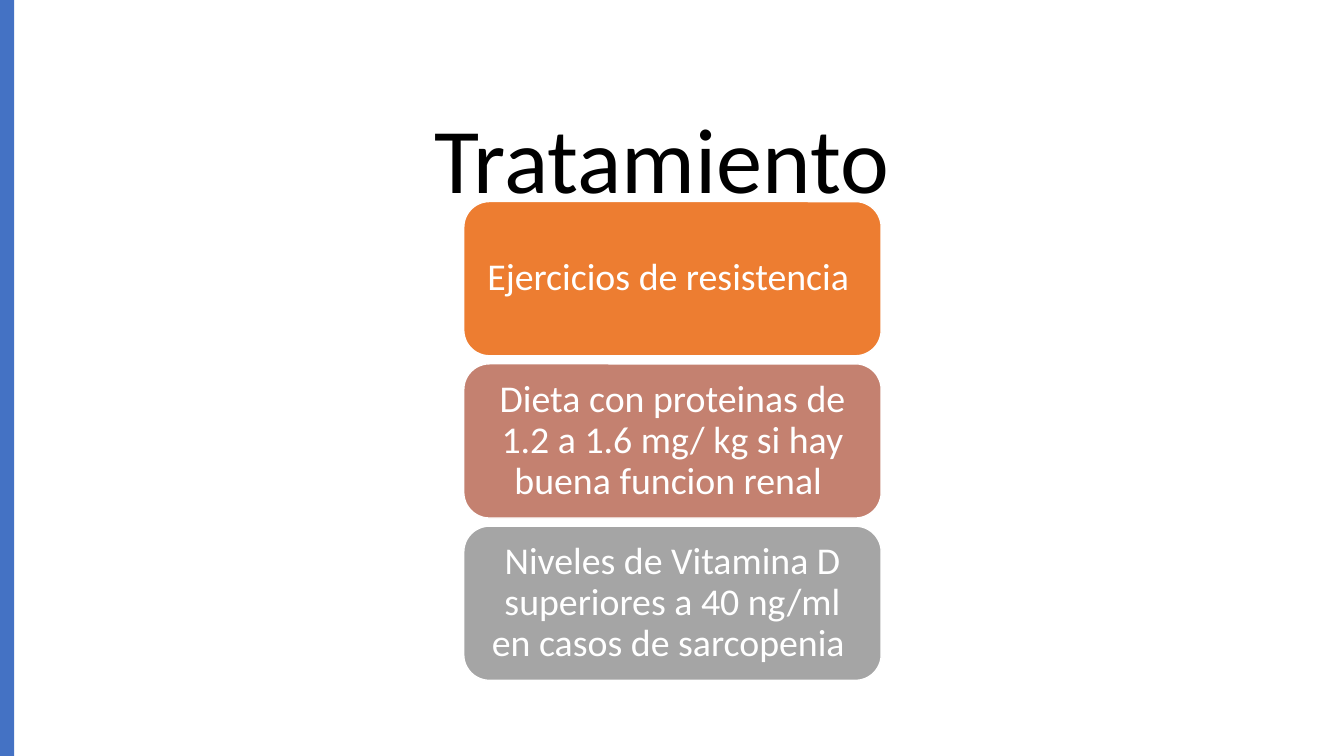
from pptx import Presentation
from pptx.dml.color import RGBColor
from pptx.enum.shapes import MSO_SHAPE
from pptx.enum.text import MSO_ANCHOR, PP_ALIGN
from pptx.util import Inches, Pt

TITLE = "Tratamiento "
TREATMENTS = [
    ("Ejercicios de resistencia ", "orange"),
    ("Dieta con proteinas de 1.2 a 1.6 mg/ kg si hay buena funcion renal ", "clay"),
    ("Niveles de Vitamina D superiores a 40 ng/ml en casos de sarcopenia ", "gray"),
]
COLORS = {
    "black": "000000",
    "white": "FFFFFF",
    "blue": "4472C4",
    "orange": "ED7D31",
    "clay": "C48170",
    "gray": "A5A5A5",
}
FONT = "Calibri"
SLIDE_W, SLIDE_H = 13.33, 7.5
CARD_LEFT, CARD_TOP, CARD_W, CARD_H = 4.6, 2, 4.14, 1.53
CARD_STEP = 1.61


def color(name):
    return RGBColor.from_string(COLORS[name])


def add_block(slide, preset, box, fill):
    block = slide.shapes.add_shape(preset, *map(Inches, box))
    block.shadow.inherit = False
    block.fill.solid()
    block.fill.fore_color.rgb = color(fill)
    block.line.fill.background()
    return block


def write(shape, text, size, ink, inset_x, inset_y):
    frame = shape.text_frame
    frame.word_wrap = True
    frame.vertical_anchor = MSO_ANCHOR.MIDDLE
    frame.margin_left = frame.margin_right = Inches(inset_x)
    frame.margin_top = frame.margin_bottom = Inches(inset_y)
    frame.text = text
    paragraph = frame.paragraphs[0]
    paragraph.alignment = PP_ALIGN.CENTER
    paragraph.line_spacing = 0.9
    font = paragraph.runs[0].font
    font.name = FONT
    font.size = Pt(size)
    font.color.rgb = color(ink)


def main():
    deck = Presentation()
    deck.slide_width, deck.slide_height = Inches(SLIDE_W), Inches(SLIDE_H)
    slide = deck.slides.add_slide(deck.slide_layouts[6])

    heading = slide.shapes.add_textbox(*map(Inches, (0.92, 0.9, 11.5, 1.45)))
    write(heading, TITLE, 66, "black", 0.1, 0.05)

    add_block(slide, MSO_SHAPE.RECTANGLE, (0, 0, 0.14, SLIDE_H), "blue")

    for row, (treatment, fill) in enumerate(TREATMENTS):
        top = CARD_TOP + row * CARD_STEP
        card = add_block(slide, MSO_SHAPE.ROUNDED_RECTANGLE,
                         (CARD_LEFT, top, CARD_W, CARD_H), fill)
        card.line.color.rgb = color("white")
        card.line.width = Pt(1)
        write(card, treatment, 27, "white", 0.11, 0.06)

    deck.save("out.pptx")


if __name__ == "__main__":
    main()
